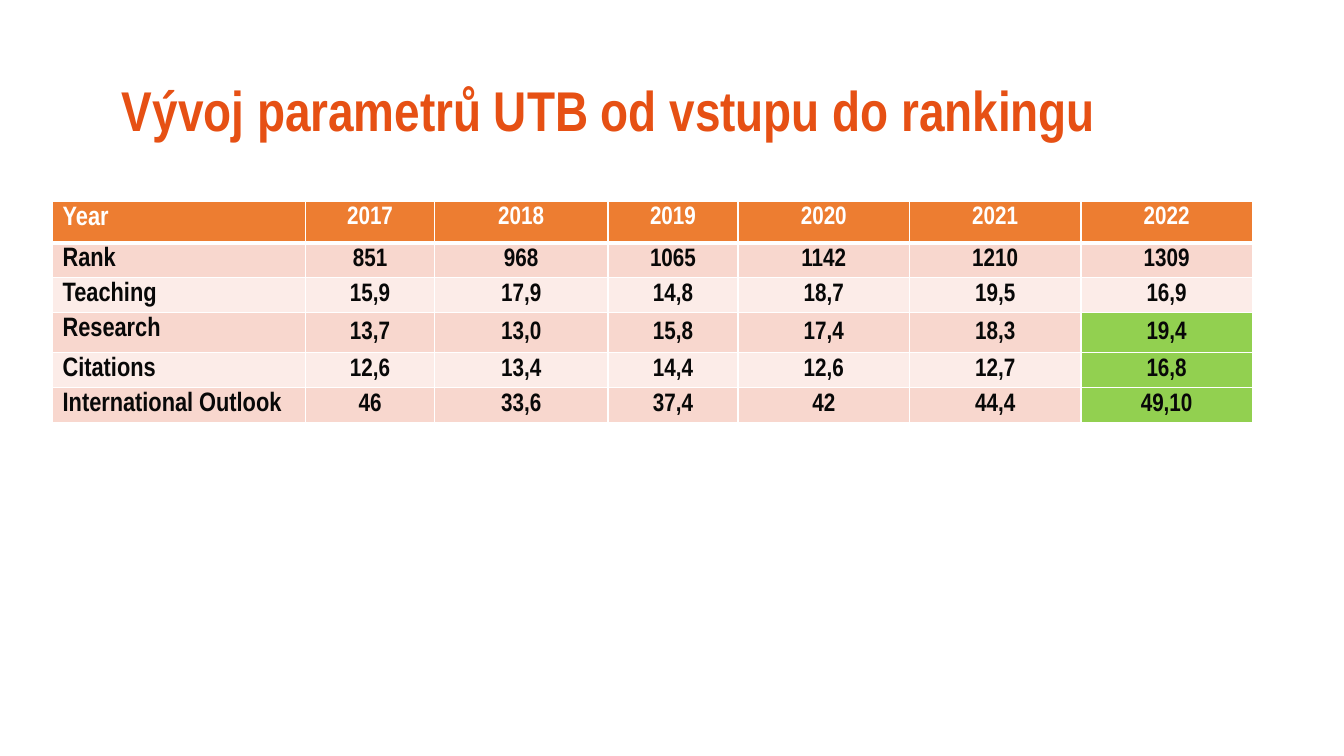
from lxml.etree import SubElement
from pptx import Presentation
from pptx.dml.color import RGBColor
from pptx.enum.text import MSO_ANCHOR, MSO_AUTO_SIZE, PP_ALIGN
from pptx.oxml.ns import qn
from pptx.util import Cm, Pt

# Content
TITLE = "Vývoj parametrů UTB od vstupu do rankingu"
ROWS = [
    ("Year", "2017", "2018", "2019", "2020", "2021", "2022"),
    ("Rank", "851", "968", "1065", "1142", "1210", "1309"),
    ("Teaching", "15,9", "17,9", "14,8", "18,7", "19,5", "16,9"),
    ("Research", "13,7", "13,0", "15,8", "17,4", "18,3", "19,4"),
    ("Citations", "12,6", "13,4", "14,4", "12,6", "12,7", "16,8"),
    ("International Outlook", "46", "33,6", "37,4", "42", "44,4", "49,10"),
]
IMPROVED = {"Research", "Citations", "International Outlook"}
COL_WIDTHS = (6.37, 3.25, 4.37, 3.28, 4.32, 4.32, 4.32)
ROW_HEIGHTS = (1.04, 0.88, 0.88, 1, 0.88, 0.88)

FONT = "Arial Narrow"
HEADER, BANDS, GREEN = "ED7D31", ("FCECE8", "F8D7CE"), "92D050"


def rgb(color):
    return RGBColor.from_string(color)


def add_text(p, text, size, color):
    r = p.add_run()
    r.text = text
    r.font.name, r.font.size, r.font.bold = FONT, Pt(size), True
    r.font.color.rgb = rgb(color)


def add_borders(cell, bottom):
    """Draw white cell borders, with the given bottom width in points."""
    tcPr = cell._tc.get_or_add_tcPr()
    for side, width in (("L", 1), ("R", 1), ("T", 1), ("B", bottom)):
        ln = SubElement(tcPr, qn("a:ln" + side), w=str(Pt(width)))
        fill = SubElement(ln, qn("a:solidFill"))
        SubElement(fill, qn("a:srgbClr"), val="FFFFFF")


def cell_color(row, col):
    if row == 0:
        return HEADER
    if col == len(COL_WIDTHS) - 1 and ROWS[row][0] in IMPROVED:
        return GREEN
    return BANDS[row % 2]


prs = Presentation()
prs.slide_width, prs.slide_height = Cm(33.87), Cm(19.05)
s = prs.slides.add_slide(prs.slide_layouts[5])

# Title
title = s.shapes.title
title.left, title.top, title.width, title.height = Cm(2.82), Cm(1.02), Cm(28.73), Cm(3.68)
tf = title.text_frame
tf.auto_size, tf.word_wrap = MSO_AUTO_SIZE.NONE, True
tf.vertical_anchor = MSO_ANCHOR.MIDDLE
p = tf.paragraphs[0]
p.alignment, p.line_spacing = PP_ALIGN.LEFT, 0.9
add_text(p, TITLE, 40, "E65014")

# Table
table = s.shapes.add_table(
    len(ROWS), len(COL_WIDTHS), Cm(1.33), Cm(5.08),
    Cm(sum(COL_WIDTHS)), Cm(sum(ROW_HEIGHTS))).table
for column, width in zip(table.columns, COL_WIDTHS):
    column.width = Cm(width)
for row, height in zip(table.rows, ROW_HEIGHTS):
    row.height = Cm(height)

for i, values in enumerate(ROWS):
    for j, value in enumerate(values):
        cell = table.cell(i, j)
        is_label = j == 0
        # Labels and the header row hang from the top; values are centred
        from_top = is_label or i == 0
        cell.vertical_anchor = MSO_ANCHOR.TOP if from_top else MSO_ANCHOR.MIDDLE
        cell.margin_top = Cm(0.11 if from_top else 0.03)
        cell.margin_bottom = Cm(0.03)
        cell.margin_left = cell.margin_right = Cm(0.25 if is_label else 0.03)
        add_borders(cell, bottom=3 if i == 0 else 1)
        cell.fill.solid()
        cell.fill.fore_color.rgb = rgb(cell_color(i, j))
        p = cell.text_frame.paragraphs[0]
        p.alignment = PP_ALIGN.LEFT if is_label else PP_ALIGN.CENTER
        add_text(p, value, 19 if is_label else 18, "FFFFFF" if i == 0 else "080808")

prs.save("out.pptx")
